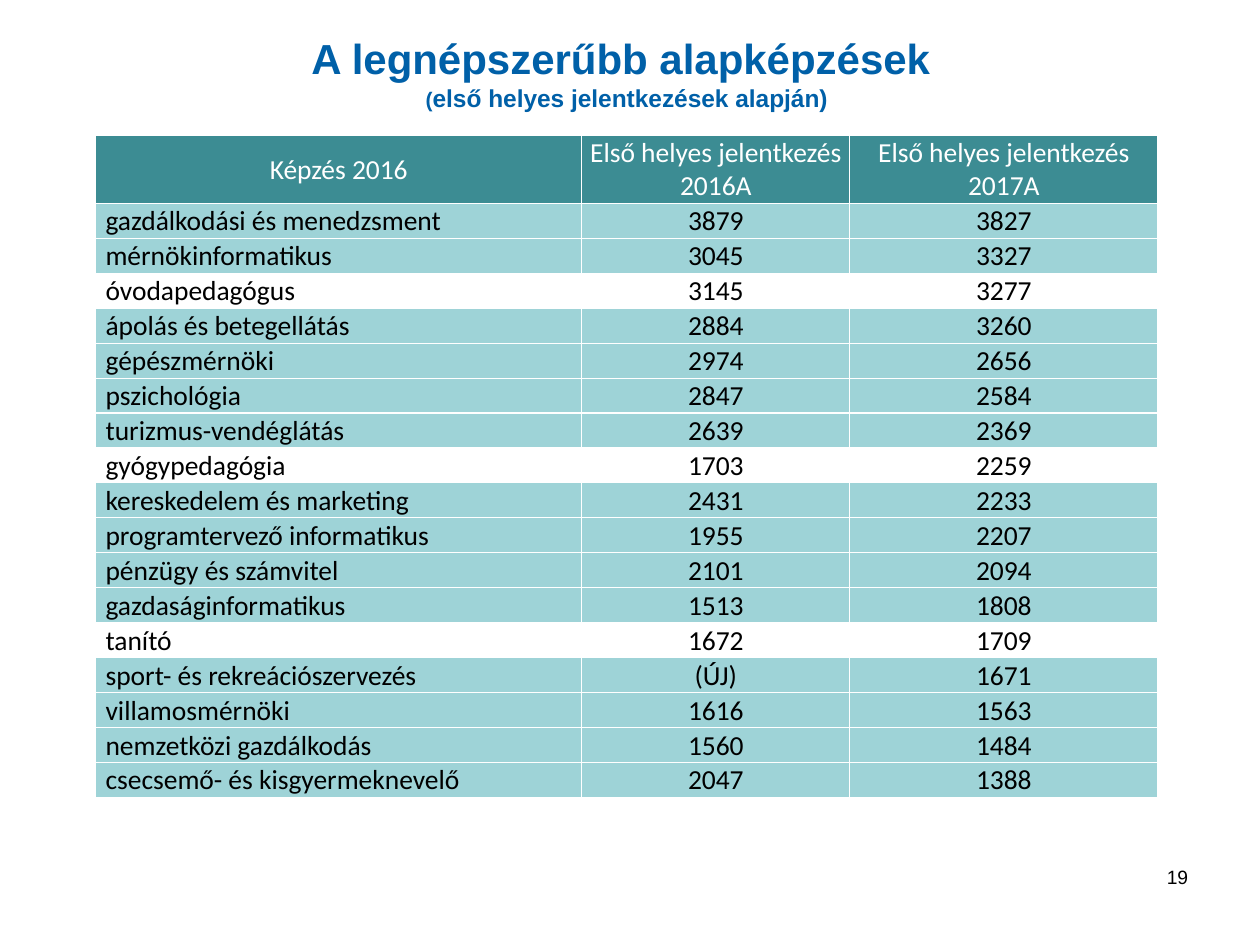
from dataclasses import dataclass
from typing import NamedTuple

from lxml.etree import SubElement
from pptx import Presentation
from pptx.dml.color import RGBColor as Rgb
from pptx.enum.text import MSO_ANCHOR as Anchor, MSO_AUTO_SIZE as Fit, PP_ALIGN as Align
from pptx.oxml.ns import qn
from pptx.util import Pt


@dataclass(frozen=True)
class Theme:
    blue: str = "0060A8"
    teal: str = "3C8C93"
    pale: str = "9ED3D7"
    white: str = "FFFFFF"
    black: str = "000000"
    head: str = "Arial"
    body: str = "Calibri"
    title: float = 33.6
    sub: float = 19.6
    paren: float = 16.8
    cell: float = 22
    page: float = 15.4


class Course(NamedTuple):
    name: str
    old: str
    new: str
    plain: bool = False


THEME = Theme()
HEADS = ("Képzés 2016", "Első helyes jelentkezés 2016A", "Első helyes jelentkezés 2017A")
COURSES = (
    Course("gazdálkodási és menedzsment", "3879", "3827"),
    Course("mérnökinformatikus", "3045", "3327"),
    Course("óvodapedagógus", "3145", "3277", plain=True),
    Course("ápolás és betegellátás", "2884", "3260"),
    Course("gépészmérnöki", "2974", "2656"),
    Course("pszichológia", "2847", "2584"),
    Course("turizmus-vendéglátás", "2639", "2369"),
    Course("gyógypedagógia", "1703", "2259", plain=True),
    Course("kereskedelem és marketing", "2431", "2233"),
    Course("programtervező informatikus", "1955", "2207"),
    Course("pénzügy és számvitel", "2101", "2094"),
    Course("gazdaságinformatikus", "1513", "1808"),
    Course("tanító", "1672", "1709", plain=True),
    Course("sport- és rekreációszervezés", "(ÚJ)", "1671"),
    Course("villamosmérnöki", "1616", "1563"),
    Course("nemzetközi gazdálkodás", "1560", "1484"),
    Course("csecsemő- és kisgyermeknevelő", "2047", "1388"),
)
WIDTHS = (388.8, 214.56, 246.24)
HEAD_H, ROW_H = 54.7, 27.95


def write(para, text: str, *, size: float, color: str, font: str,
          bold: bool = False, align: Align = Align.CENTER) -> None:
    para.alignment = align
    run = para.add_run()
    run.text = text
    run.font.size = Pt(size)
    run.font.name = font
    run.font.bold = bold
    run.font.color.rgb = Rgb.from_string(color)


def edge(cell) -> None:
    props = cell._tc.get_or_add_tcPr()
    for side in ("a:lnL", "a:lnR", "a:lnT", "a:lnB"):
        line = SubElement(props, qn(side), w=str(Pt(1)))
        fill = SubElement(line, qn("a:solidFill"))
        SubElement(fill, qn("a:srgbClr"), val=THEME.white)


def fill_cell(cell, text: str, *, fill: str | None, color: str,
              align: Align, anchor: Anchor) -> None:
    edge(cell)
    cell.margin_left = cell.margin_right = cell.margin_top = Pt(0.7)
    cell.margin_bottom = Pt(0)
    cell.vertical_anchor = anchor
    if fill:
        cell.fill.solid()
        cell.fill.fore_color.rgb = Rgb.from_string(fill)
    else:
        cell.fill.background()
    para = cell.text_frame.paragraphs[0]
    if align == Align.LEFT:
        para._p.get_or_add_pPr().set("marL", str(Pt(7.2)))
    write(para, text, size=THEME.cell, color=color, font=THEME.body, align=align)


def add_title(slide) -> None:
    title = slide.shapes.title
    title.left, title.top, title.width, title.height = Pt(23.8), Pt(20.9), Pt(955.4), Pt(365.8)
    frame = title.text_frame
    frame.auto_size = Fit.NONE
    frame.word_wrap = True
    frame.vertical_anchor = Anchor.TOP
    frame.margin_top = Pt(5)
    para = frame.paragraphs[0]
    look = dict(color=THEME.blue, font=THEME.head, bold=True)
    write(para, "A legnépszerűbb alapképzések ", size=THEME.title, **look)
    para.add_line_break()
    write(para, "(", size=THEME.paren, **look)
    write(para, "első helyes jelentkezések alapján)", size=THEME.sub, **look)


def add_grid(slide) -> None:
    high = HEAD_H + ROW_H * len(COURSES)
    table = slide.shapes.add_table(len(COURSES) + 1, len(WIDTHS), Pt(76.6), Pt(108),
                                   Pt(sum(WIDTHS)), Pt(high)).table
    table.horz_banding = False
    for col, width in zip(table.columns, WIDTHS):
        col.width = Pt(width)
    for i, row in enumerate(table.rows):
        row.height = Pt(ROW_H if i else HEAD_H)
    for j, text in enumerate(HEADS):
        fill_cell(table.cell(0, j), text, fill=THEME.teal, color=THEME.white,
                  align=Align.CENTER, anchor=Anchor.MIDDLE)
    for i, course in enumerate(COURSES, 1):
        for j, text in enumerate(course[:3]):
            fill_cell(table.cell(i, j), text, fill=None if course.plain else THEME.pale,
                      color=THEME.black, align=Align.CENTER if j else Align.LEFT,
                      anchor=Anchor.BOTTOM)


def add_page(slide) -> None:
    frame = slide.shapes.add_textbox(Pt(722.2), Pt(688.3), Pt(235.4), Pt(52.6)).text_frame
    frame.word_wrap = True
    write(frame.paragraphs[0], "19", size=THEME.page, color=THEME.black,
          font=THEME.head, align=Align.RIGHT)


def main() -> None:
    deck = Presentation()
    deck.slide_width, deck.slide_height = Pt(1008), Pt(756)
    slide = deck.slides.add_slide(deck.slide_layouts[5])
    add_title(slide)
    add_page(slide)
    add_grid(slide)
    deck.save("out.pptx")


if __name__ == "__main__":
    main()
